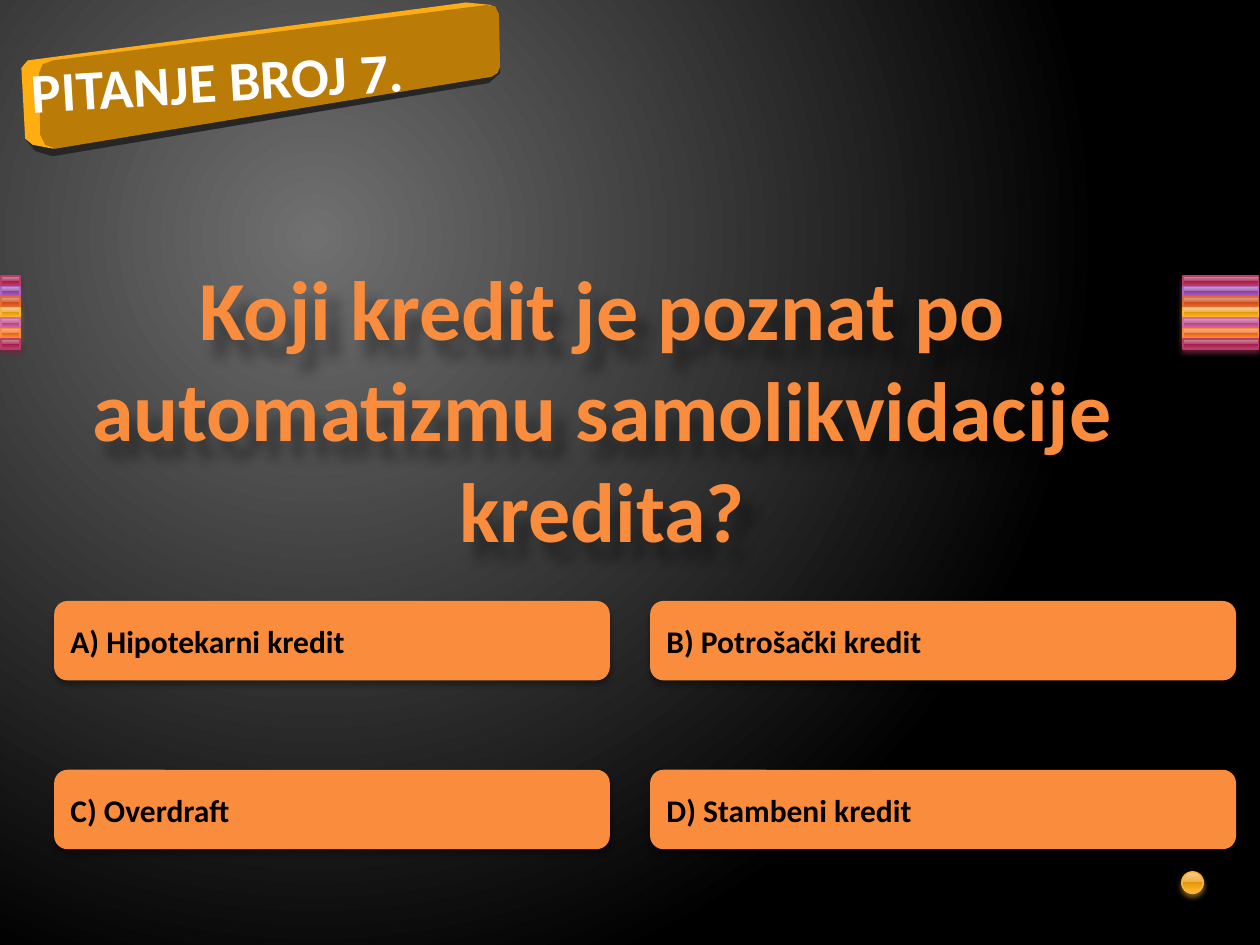
"""Build a quiz slide with one question and four answer boxes."""
from typing import NamedTuple

from pptx import Presentation
from pptx.dml.color import RGBColor
from pptx.enum.shapes import MSO_SHAPE
from pptx.enum.text import MSO_ANCHOR, PP_ALIGN
from pptx.oxml import parse_xml
from pptx.oxml.ns import nsdecls, qn
from pptx.util import Inches, Pt

WHITE = RGBColor(0xFF, 0xFF, 0xFF)
BLACK = RGBColor(0x00, 0x00, 0x00)
GRAY = RGBColor(0x70, 0x70, 0x70)
ORANGE = RGBColor(0xFA, 0x8D, 0x3D)
BANNER_FACE = RGBColor(0xBB, 0x7C, 0x07)
BANNER_SIDE = RGBColor(0xFF, 0xAE, 0x12)
BANNER_BASE = RGBColor(0x26, 0x26, 0x26)
FONT = "Calibri"
LINEAR = '<a:lin ang="5400000" scaled="0"/>'
RADIAL = '<a:path path="circle"><a:fillToRect l="50000" t="50000" r="100000" b="100000"/></a:path>'


class Gloss(NamedTuple):
    stops: str
    line: RGBColor
    shadow: RGBColor


class Shadow(NamedTuple):
    color: RGBColor
    opacity: int
    blur: float
    distance: float
    angle: int


class Band(NamedTuple):
    left: float
    width: float


class Answer(NamedTuple):
    text: str
    column: int
    row: int


class Facet(NamedTuple):
    color: RGBColor
    points: list[tuple[float, float]]


def gloss(stops: str, line: str, shadow: str) -> Gloss:
    return Gloss(stops, RGBColor.from_string(line), RGBColor.from_string(shadow))


CRIMSON = gloss("CE94A2 B34869 A61749 C13764 CA5D7C", "B83D68", "722640")
PURPLE = gloss("C6A2D0 A666B4 8F3EA1 AD5DBF BA76CA", "AC66BB", "6A3F73")
RUST = gloss("E7A493 D66B42 CC4809 E9642C F07B55", "DE6C36", "894321")
AMBER = gloss("FBCC93 EFAE43 E59807 FFB432 FFBE5F", "F9B639", "9A7023")
PINK = gloss("DDA4C1 C66B9D B34181 D361A0 DC79AE", "CF6DA4", "804365")
TANGERINE = gloss("FBB494 F08745 E5670B FF8736 FF9961", "FA8D3D", "9A5726")
STRIPES = [CRIMSON, PURPLE, RUST, AMBER, PINK, TANGERINE, CRIMSON]
STRIPE_TOP, STRIPE_HEIGHT, STRIPE_PITCH = 2.19, 0.08, 0.5 / 6
BANDS = [Band(0.01, 0.15), Band(9.39, 0.6)]
GLOSS_POSITIONS = [0, 49, 49, 92, 100]

COLUMNS = [Band(0.43, 4.41), Band(5.16, 4.65)]
ROW_TOPS = [4.77, 6.11]
ANSWERS = [
    Answer("A) Hipotekarni kredit", 0, 0),
    Answer("C) Overdraft", 0, 1),
    Answer("B) Potrošački kredit", 1, 0),
    Answer("D) Stambeni kredit", 1, 1),
]
BANNER = [
    Facet(BANNER_BASE, [(0.2, 1.1), (0.28, 1.2), (0.42, 1.24), (3.88, 0.66), (3.97, 0.58), (3.97, 0.4)]),
    Facet(BANNER_SIDE, [(0.17, 0.54), (0.22, 0.48), (3.7, 0.02), (3.9, 0.04), (3.9, 0.5),
                        (0.42, 1.18), (0.26, 1.15), (0.2, 1.1)]),
    Facet(BANNER_FACE, [(0.31, 0.58), (0.34, 0.51), (0.42, 0.48), (3.86, 0.04), (3.93, 0.05), (3.96, 0.11),
                        (3.97, 0.53), (3.95, 0.58), (3.9, 0.61), (0.44, 1.18), (0.36, 1.15), (0.32, 1.07)]),
]


def apply_gradient(fill, element, stops, geometry: str) -> None:
    fill.gradient()
    old = next(element.iter(qn("a:gradFill")))
    stop_xml = "".join(
        f'<a:gs pos="{position * 1000}"><a:srgbClr val="{color}"/></a:gs>' for position, color in stops
    )
    new = parse_xml(
        f'<a:gradFill {nsdecls("a")} rotWithShape="1"><a:gsLst>{stop_xml}</a:gsLst>{geometry}</a:gradFill>'
    )
    old.getparent().replace(old, new)


def apply_shadow(shape, shadow: Shadow) -> None:
    shape.shadow.inherit = False
    shape._element.spPr.find(qn("a:effectLst")).append(parse_xml(
        f'<a:outerShdw {nsdecls("a")} blurRad="{Pt(shadow.blur)}" dist="{Pt(shadow.distance)}" '
        f'dir="{shadow.angle * 60000}" algn="ctr" rotWithShape="0"><a:srgbClr val="{shadow.color}">'
        f'<a:alpha val="{shadow.opacity * 1000}"/></a:srgbClr></a:outerShdw>'
    ))


def write_text(shape, text: str, size: int, color: RGBColor, alignment=PP_ALIGN.LEFT) -> None:
    frame = shape.text_frame
    frame.text = text
    frame.word_wrap = True
    frame.vertical_anchor = MSO_ANCHOR.MIDDLE
    paragraph = frame.paragraphs[0]
    paragraph.alignment = alignment
    font = paragraph.runs[0].font
    font.name, font.size, font.bold = FONT, Pt(size), True
    font.color.rgb = color


def add_glossy(slide, kind, left: float, top: float, width: float, height: float, style: Gloss) -> None:
    shape = slide.shapes.add_shape(kind, Inches(left), Inches(top), Inches(width), Inches(height))
    apply_gradient(shape.fill, shape._element, zip(GLOSS_POSITIONS, style.stops.split()), LINEAR)
    shape.line.color.rgb = style.line
    shape.line.width = Pt(0.9)
    apply_shadow(shape, Shadow(style.shadow, 83, 3.1, 2, 90))


def add_facet(slide, facet: Facet) -> None:
    points = [(Inches(x), Inches(y)) for x, y in facet.points]
    builder = slide.shapes.build_freeform(*points[0])
    builder.add_line_segments(points[1:], close=True)
    shape = builder.convert_to_shape()
    shape.fill.solid()
    shape.fill.fore_color.rgb = facet.color
    shape.line.fill.background()
    shape.shadow.inherit = False


def add_answer(slide, answer: Answer) -> None:
    column = COLUMNS[answer.column]
    shape = slide.shapes.add_shape(
        MSO_SHAPE.ROUNDED_RECTANGLE,
        Inches(column.left), Inches(ROW_TOPS[answer.row]), Inches(column.width), Inches(0.63),
    )
    shape.fill.solid()
    shape.fill.fore_color.rgb = ORANGE
    shape.line.fill.background()
    apply_shadow(shape, Shadow(BLACK, 32, 3.5, 2.2, 90))
    write_text(shape, answer.text, 18, BLACK)


def main() -> None:
    presentation = Presentation()
    presentation.slide_width, presentation.slide_height = Inches(10), Inches(7.5)
    slide = presentation.slides.add_slide(presentation.slide_layouts[5])
    apply_gradient(slide.background.fill, slide._element, [(0, GRAY), (100, BLACK)], RADIAL)

    for band in BANDS:
        for index, style in enumerate(STRIPES):
            top = STRIPE_TOP + index * STRIPE_PITCH
            add_glossy(slide, MSO_SHAPE.RECTANGLE, band.left, top, band.width, STRIPE_HEIGHT, style)
    add_glossy(slide, MSO_SHAPE.OVAL, 9.38, 6.92, 0.17, 0.17, AMBER)

    for facet in BANNER:
        add_facet(slide, facet)
    label = slide.shapes.add_textbox(Inches(0.15), Inches(0.31), Inches(3.5), Inches(0.63))
    label.rotation = -3.3
    write_text(label, "PITANJE BROJ 7.", 32, WHITE)

    title = slide.shapes.title
    title.left, title.top, title.width, title.height = Inches(0.28), Inches(1.86), Inches(9), Inches(2.76)
    write_text(title, "Koji kredit je poznat po automatizmu samolikvidacije kredita?", 48, ORANGE, PP_ALIGN.CENTER)
    apply_shadow(title, Shadow(BLACK, 40, 8, 12, 55))

    for answer in ANSWERS:
        add_answer(slide, answer)
    presentation.save("out.pptx")


if __name__ == "__main__":
    main()
